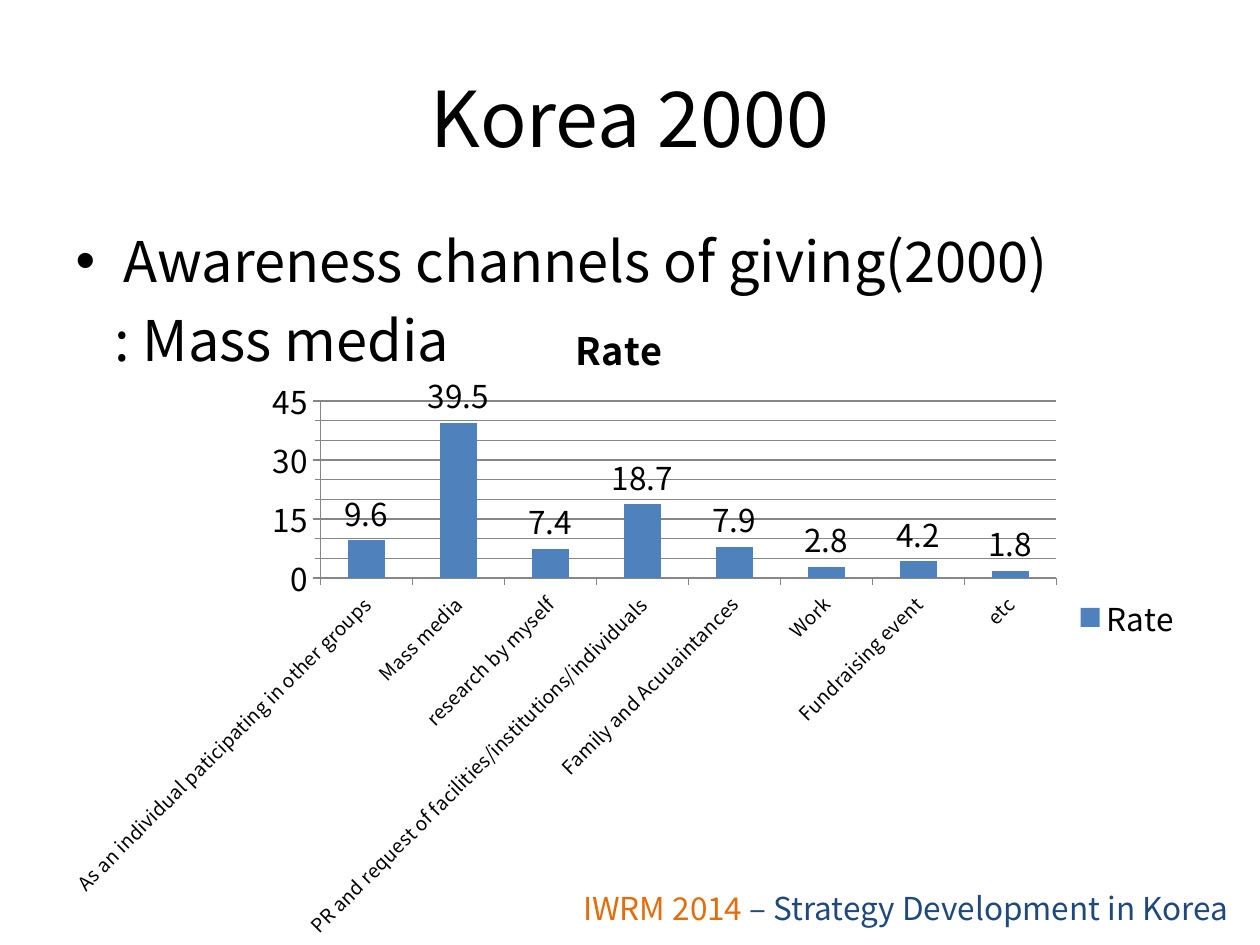
from dataclasses import dataclass

from lxml import etree
from pptx import Presentation
from pptx.chart.data import CategoryChartData
from pptx.dml.color import RGBColor
from pptx.enum.chart import (XL_CHART_TYPE, XL_LABEL_POSITION,
                             XL_LEGEND_POSITION, XL_TICK_MARK)
from pptx.enum.text import MSO_ANCHOR, MSO_AUTO_SIZE, PP_ALIGN
from pptx.oxml import parse_xml
from pptx.oxml.ns import nsdecls, qn
from pptx.util import Inches, Pt

COLUMNS = XL_CHART_TYPE.COLUMN_CLUSTERED
LEGEND_RIGHT = XL_LEGEND_POSITION.RIGHT
LABEL_ABOVE = XL_LABEL_POSITION.OUTSIDE_END
TICK_OUTSIDE = XL_TICK_MARK.OUTSIDE
CENTER, LEFT = PP_ALIGN.CENTER, PP_ALIGN.LEFT
MIDDLE, TOP = MSO_ANCHOR.MIDDLE, MSO_ANCHOR.TOP
NO_AUTOFIT = MSO_AUTO_SIZE.NONE


@dataclass(frozen=True)
class Theme:
    font: str = "Noto Sans CJK KR"
    text: str = "000000"
    accent: str = "E46C0A"
    footer: str = "1F497D"
    column: str = "4F81BD"
    grid: str = "868686"
    title_size: float = 44
    body_size: float = 32
    chart_title_size: float = 21.6
    small_size: float = 18
    category_size: float = 11


THEME = Theme()

CHANNEL_RATES = {
    "As an individual paticipating in other groups": 9.6,
    "Mass media": 39.5,
    "research by myself": 7.4,
    "PR and request of facilities/institutions/individuals": 18.7,
    "Family and Acuuaintances": 7.9,
    "Work": 2.8,
    "Fundraising event": 4.2,
    "etc": 1.8,
}


def style_font(font, size, color=THEME.text, bold=False):
    font.name = THEME.font
    font.size = Pt(size)
    font.bold = bold
    font.color.rgb = RGBColor.from_string(color)


def add_text(paragraph, text, *, size, color=THEME.text, bold=False, align=LEFT):
    paragraph.alignment = align
    run = paragraph.add_run()
    run.text = text
    style_font(run.font, size, color, bold)


def place(shape, left, top, width, height):
    shape.left, shape.top = Inches(left), Inches(top)
    shape.width, shape.height = Inches(width), Inches(height)


def set_bullet(paragraph, indent, hanging=0.0, bullet=None):
    """Set the left indent and either a bullet character or none."""
    properties = paragraph._p.get_or_add_pPr()
    properties.set("marL", str(Inches(indent)))
    properties.set("indent", str(-Inches(hanging)))
    if bullet:
        font = etree.SubElement(properties, qn("a:buFont"))
        font.set("typeface", "Arial")
        etree.SubElement(properties, qn("a:buChar")).set("char", bullet)
    else:
        etree.SubElement(properties, qn("a:buNone"))


def fill_title(title):
    place(title, 0.5, 0.3, 9, 1.25)
    frame = title.text_frame
    frame.vertical_anchor = MIDDLE
    add_text(frame.paragraphs[0], "Korea 2000", size=THEME.title_size, align=CENTER)


def fill_body(body):
    place(body, 0.5, 1.75, 9, 4.95)
    frame = body.text_frame
    frame.auto_size = NO_AUTOFIT
    frame.vertical_anchor = TOP
    heading, answer = frame.paragraphs[0], frame.add_paragraph()
    add_text(heading, "Awareness channels of giving(2000)", size=THEME.body_size)
    add_text(answer, ": Mass media", size=THEME.body_size)
    set_bullet(heading, 0.38, hanging=0.38, bullet="•")
    set_bullet(answer, 0.31)


def add_footer(slide):
    footer = slide.shapes.add_textbox(Inches(4.53), Inches(7.01),
                                      Inches(5.47), Inches(0.4))
    footer.text_frame.word_wrap = True
    line = footer.text_frame.paragraphs[0]
    add_text(line, "IWRM 2014 ", size=THEME.small_size, color=THEME.accent)
    add_text(line, "– Strategy Development in Korea",
             size=THEME.small_size, color=THEME.footer)


def style_line(line, width=0.75):
    line.color.rgb = RGBColor.from_string(THEME.grid)
    line.width = Pt(width)


def style_axis(axis, size):
    axis.major_tick_mark = TICK_OUTSIDE
    style_font(axis.tick_labels.font, size)
    style_line(axis.format.line)


def add_gridlines(axis):
    axis.has_major_gridlines = axis.has_minor_gridlines = True
    style_line(axis.major_gridlines.format.line, width=1)
    minor = axis._element.find(qn("c:minorGridlines"))
    minor.append(parse_xml(
        f'<c:spPr {nsdecls("c", "a")}><a:ln w="{Pt(0.75)}"><a:solidFill>'
        f'<a:srgbClr val="{THEME.grid}"/></a:solidFill></a:ln></c:spPr>'))


def set_plot_layout(chart, **fractions):
    """Fix the inner plot area as fractions of the chart."""
    plot_area = chart._chartSpace.chart.plotArea
    for automatic in plot_area.findall(qn("c:layout")):
        plot_area.remove(automatic)
    modes = '<c:xMode val="edge"/><c:yMode val="edge"/>'
    sizes = "".join(f'<c:{key} val="{value}"/>' for key, value in fractions.items())
    plot_area.insert(0, parse_xml(
        f'<c:layout {nsdecls("c")}><c:manualLayout>'
        f'<c:layoutTarget val="inner"/>{modes}{sizes}'
        f'</c:manualLayout></c:layout>'))


def add_rate_chart(slide):
    rates = CategoryChartData()
    rates.categories = list(CHANNEL_RATES)
    rates.add_series("Rate", list(CHANNEL_RATES.values()))
    chart = slide.shapes.add_chart(COLUMNS, Inches(0.35), Inches(2.3),
                                   Inches(9.13), Inches(5.2), rates).chart
    style_font(chart.font, THEME.small_size)

    chart.has_title = True
    add_text(chart.chart_title.text_frame.paragraphs[0], "Rate",
             size=THEME.chart_title_size, bold=True, align=CENTER)
    chart.has_legend = True
    chart.legend.position = LEGEND_RIGHT
    chart.legend.include_in_layout = False
    style_font(chart.legend.font, THEME.small_size)

    style_axis(chart.category_axis, THEME.category_size)
    label_body = chart.category_axis._element.find(
        f'{qn("c:txPr")}/{qn("a:bodyPr")}')
    label_body.set("rot", "-2700000")
    label_body.set("vert", "horz")

    values = chart.value_axis
    style_axis(values, THEME.small_size)
    values.minor_tick_mark = TICK_OUTSIDE
    values.minimum_scale, values.maximum_scale = 0, 45
    values.major_unit, values.minor_unit = 15, 5
    add_gridlines(values)

    plot = chart.plots[0]
    plot.vary_by_categories = False
    plot.gap_width = 150
    series = plot.series[0]
    series.format.fill.solid()
    series.format.fill.fore_color.rgb = RGBColor.from_string(THEME.column)
    labels = series.data_labels
    labels.show_value = True
    labels.position = LABEL_ABOVE
    style_font(labels.font, THEME.small_size)
    set_plot_layout(chart, x=0.24, y=0.17, w=0.64, h=0.27)


def main():
    presentation = Presentation()
    presentation.slide_width, presentation.slide_height = Inches(10), Inches(7.5)
    slide = presentation.slides.add_slide(presentation.slide_layouts[1])
    fill_title(slide.shapes.title)
    fill_body(slide.placeholders[1])
    add_footer(slide)
    add_rate_chart(slide)
    presentation.save("out.pptx")


if __name__ == "__main__":
    main()
